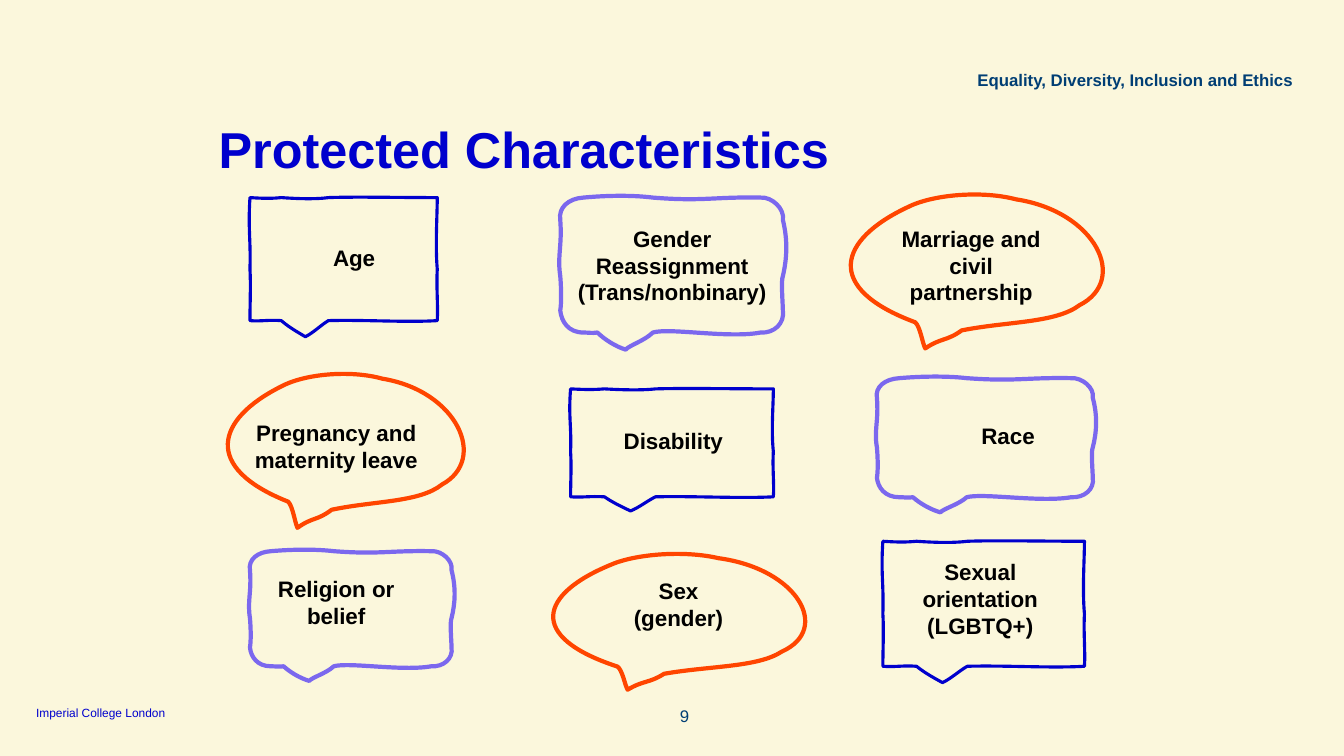
from lxml.etree import SubElement
from pptx import Presentation
from pptx.dml.color import RGBColor
from pptx.enum.text import MSO_ANCHOR, MSO_AUTO_SIZE, PP_ALIGN
from pptx.oxml.ns import qn
from pptx.util import Cm, Pt

CREAM = RGBColor(0xFB, 0xF7, 0xDC)
BLUE = RGBColor(0x00, 0x00, 0xCD)
VIOLET = RGBColor(0x7B, 0x68, 0xEE)
ORANGE = RGBColor(0xFF, 0x45, 0x00)
NAVY = RGBColor(0x00, 0x3E, 0x74)
BLACK = RGBColor(0, 0, 0)
OUTLINE_SCALE = 10

SQUARE_OUTLINE = [
    (0, 0),
    (7.5, 0.8), (11.8, 0.8), (16.7, 0),
    (23.7, 0.8), (34.4, 1.6), (41.9, 0),
    (55.9, -0.8), (79.6, 0), (100, 0),
    (100, 15.6), (98.9, 37.7), (100, 58.2),
    (99.5, 73.8), (100.5, 88.5), (100, 100),
    (83.3, 101.6), (61.3, 99.2), (41.9, 100),
    (38.2, 103.3), (33.9, 109.8), (29.6, 113.1),
    (23.1, 107.4), (19.9, 104.1), (16.7, 100),
    (9.7, 99.2), (5.9, 100.8), (0, 100),
    (0, 87.7), (0.5, 70), (0, 58.2),
    (0.5, 33.6), (-1.1, 26.2), (0, 0),
]
ROUNDED_OUTLINE = [
    (0, 16.5),
    (-0.9, 7.5), (3.6, 0.7), (10.4, 0),
    (20, -1.5), (32, -2), (41.6, 0),
    (64.3, 3), (68.8, -0.7), (90, 0),
    (95, -0.7), (100.9, 8.2), (100, 16.5),
    (102.3, 32), (101.8, 45.5), (100, 58.2),
    (99.1, 61.2), (100, 79), (100, 83.6),
    (100.9, 93.3), (96, 100.7), (90, 100),
    (75.6, 104.5), (49.3, 96.3), (41.6, 100),
    (38, 106), (30.8, 109.7), (29.4, 112.7),
    (24.9, 110.4), (19.9, 105.2), (16.7, 100),
    (14, 100.7), (13.1, 100), (10.4, 100),
    (3.6, 100), (0.5, 91.8), (0, 83.6),
    (0.5, 79.1), (0.5, 67.9), (0, 58.2),
    (-1.4, 43.3), (0.9, 35.8), (0, 16.5),
]
OVAL_OUTLINE = [
    (29.2, 112.7),
    (28, 108), (27.3, 97), (25.3, 93.3),
    (-11, 67.9), (-4.7, 32.1), (22.1, 8.2),
    (32, -1.5), (51.4, -4.5), (64.8, 2.2),
    (96, 11.2), (109.1, 61.9), (89.7, 80.6),
    (80.2, 94), (61.7, 92.5), (43.5, 99.3),
    (37.5, 107.5), (35.6, 104.5), (29.2, 112.7),
]
SQUARE = (SQUARE_OUTLINE, BLUE, 2.25)
ROUNDED = (ROUNDED_OUTLINE, VIOLET, 3)
OVAL = (OVAL_OUTLINE, ORANGE, 3)

CHARACTERISTICS = [
    ("Age", SQUARE, (6.3, 4.98, 4.72, 3.1), (0.96, 1.04, 3.33, 0.94)),
    ("Gender Reassignment (Trans/nonbinary)", ROUNDED,
     (14.12, 4.98, 5.61, 3.4), (0, 0.56, 5.64, 2.31)),
    ("Marriage and civil partnership", OVAL,
     (21.44, 4.95, 6.43, 3.4), (0.66, 0.59, 4.75, 2.31)),
    ("Pregnancy and maternity leave", OVAL,
     (5.74, 9.47, 6.02, 3.4), (0.36, 0.97, 4.75, 1.63)),
    ("Disability", SQUARE, (14.38, 9.8, 5.11, 2.72), (0.38, 0.84, 4.42, 0.94)),
    ("Race", ROUNDED, (22.1, 9.53, 5.44, 3), (1.17, 0.99, 4.27, 0.94)),
    ("Religion or belief", ROUNDED,
     (6.3, 13.89, 5.08, 2.9), (0.08, 0.49, 4.19, 1.63)),
    ("Sex (gender)", OVAL, (13.94, 14, 6.43, 3), (1.27, 0.43, 3.78, 1.63)),
    ("Sexual orientation (LGBTQ+)", SQUARE,
     (22.25, 13.64, 5.08, 3.15), (0.31, 0.3, 4.29, 2.31)),
]


def style_paragraph(paragraph, size, color, bold, align, spacing=None):
    """Set the font, alignment and line spacing of a paragraph."""
    paragraph.alignment = align
    paragraph.line_spacing = spacing
    font = paragraph.font
    font.name, font.size, font.bold = "Arial", Pt(size), bold
    font.color.rgb = color


def remove_insets(frame):
    """Let the text reach the edges of its box."""
    frame.margin_left = frame.margin_right = 0
    frame.margin_top = frame.margin_bottom = 0


def curve_outline(bubble, outline):
    """Give the freeform a chain of cubic curves, in percent of its box."""
    geometry = next(bubble.element.iter(qn("a:path")))
    for segment in list(geometry):
        geometry.remove(segment)
    for side in ("w", "h"):
        geometry.set(side, str(100 * OUTLINE_SCALE))
    curves = [("a:moveTo", outline[:1])]
    curves += [("a:cubicBezTo", outline[first:first + 3])
               for first in range(1, len(outline), 3)]
    for tag, points in curves:
        segment = SubElement(geometry, qn(tag))
        for x, y in points:
            SubElement(segment, qn("a:pt"), x=str(round(x * OUTLINE_SCALE)),
                       y=str(round(y * OUTLINE_SCALE)))
    SubElement(geometry, qn("a:close"))


def add_bubble(slide, box, style):
    """Draw a hand-sketched speech bubble in the box."""
    left, top, width, height = map(Cm, box)
    outline, color, line_width = style
    right, bottom = left + width, top + height
    builder = slide.shapes.build_freeform(left, top)
    builder.add_line_segments([(right, top), (right, bottom), (left, bottom)], close=True)
    bubble = builder.convert_to_shape()
    curve_outline(bubble, outline)
    bubble.shadow.inherit = False
    bubble.fill.background()
    bubble.line.color.rgb = color
    bubble.line.width = Pt(line_width)


def add_label(slide, text, bubble_box, label_offset):
    """Write a characteristic at its offset within the bubble."""
    dx, dy, width, height = label_offset
    label = slide.shapes.add_textbox(
        Cm(bubble_box[0] + dx), Cm(bubble_box[1] + dy), Cm(width), Cm(height))
    frame = label.text_frame
    frame.word_wrap = True
    frame.auto_size = MSO_AUTO_SIZE.SHAPE_TO_FIT_TEXT
    frame.text = text
    style_paragraph(frame.paragraphs[0], 16, BLACK, True, PP_ALIGN.CENTER)


def add_title(slide, text, box):
    """Place the slide title in the box."""
    title = slide.shapes.title
    title.left, title.top, title.width, title.height = map(Cm, box)
    frame = title.text_frame
    frame.text = text
    frame.auto_size = MSO_AUTO_SIZE.NONE
    frame.vertical_anchor = MSO_ANCHOR.BOTTOM
    remove_insets(frame)
    style_paragraph(frame.paragraphs[0], 36, BLUE, True, PP_ALIGN.LEFT, 0.9)


def add_caption(slide, text, box, size, color, bold=False,
                align=PP_ALIGN.RIGHT, anchor=MSO_ANCHOR.TOP, spacing=1.05):
    """Write a header or footer line in the box."""
    frame = slide.shapes.add_textbox(*map(Cm, box)).text_frame
    frame.word_wrap = True
    frame.vertical_anchor = anchor
    remove_insets(frame)
    frame.text = text
    style_paragraph(frame.paragraphs[0], size, color, bold, align, spacing)


def build_characteristics_slide(presentation):
    """Add the slide of protected characteristics."""
    slide = presentation.slides.add_slide(presentation.slide_layouts[5])
    slide.background.fill.solid()
    slide.background.fill.fore_color.rgb = CREAM
    add_title(slide, "Protected Characteristics", (5.51, 3.1, 22.86, 1.42))
    for text, style, bubble_box, label_offset in CHARACTERISTICS:
        add_bubble(slide, bubble_box, style)
        add_label(slide, text, bubble_box, label_offset)
    add_caption(slide, "Imperial College London", (0.91, 17.75, 3.94, 0.38), 8.5, BLUE,
                align=PP_ALIGN.LEFT, anchor=MSO_ANCHOR.BOTTOM, spacing=1.0)
    add_caption(slide, "9", (16.48, 17.75, 0.89, 0.38), 12, NAVY)
    add_caption(slide, "Equality, Diversity, Inclusion and Ethics",
                (23.9, 1.73, 8.69, 0.86), 12, NAVY, bold=True)


def main():
    """Build and save the presentation."""
    presentation = Presentation()
    presentation.slide_width, presentation.slide_height = Cm(33.87), Cm(19.05)
    build_characteristics_slide(presentation)
    presentation.save("out.pptx")


if __name__ == "__main__":
    main()
